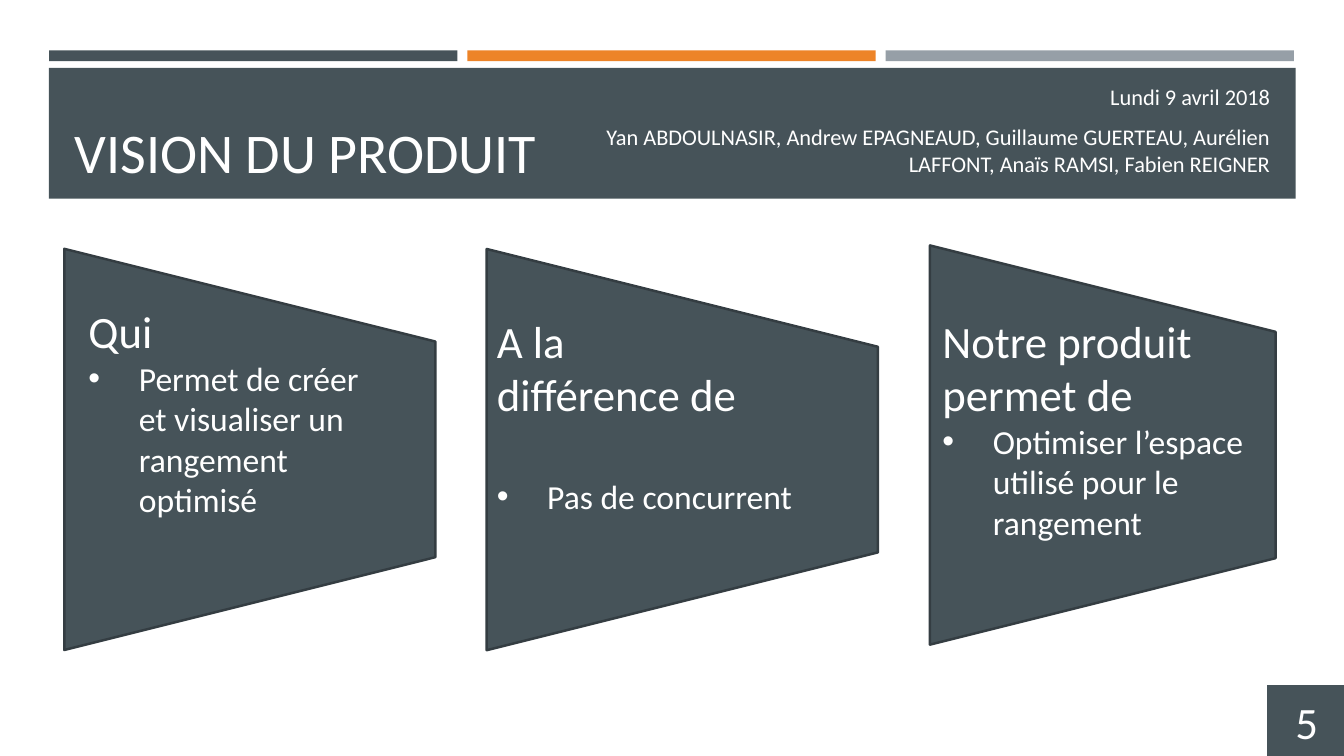
from dataclasses import dataclass

import pptx
import pptx.dml.color
import pptx.enum.shapes
import pptx.enum.text
import pptx.oxml
import pptx.oxml.ns
import pptx.util

Cm = pptx.util.Cm
Pt = pptx.util.Pt
Align = pptx.enum.text.PP_ALIGN
Anchor = pptx.enum.text.MSO_ANCHOR
Preset = pptx.enum.shapes.MSO_SHAPE

SLATE, ORANGE, GREY = "465359", "ED8428", "969FA7"
OUTLINE, WHITE = "343D42", "FFFFFF"
BULLET_INDENT = Cm(1.27)


@dataclass
class Box:
    """Position and size in centimetres."""
    left: float
    top: float
    width: float
    height: float

    def lengths(self) -> list[pptx.util.Length]:
        return [Cm(value) for value in (self.left, self.top, self.width, self.height)]


@dataclass
class Line:
    text: str
    size: float
    align: Align = Align.LEFT
    before: float = 0
    after: float = 0
    bullet: bool = False


@dataclass
class Panel:
    """A trapezoid, given before its quarter turn, and the text laid over it."""
    trapezoid: Box
    text_box: Box
    lines: list[Line]


PANELS = [
    Panel(Box(1.24, 6.65, 10.11, 9.35), Box(1.98, 7.54, 8.08, 6.76), [
        Line("Qui", 32),
        Line("Permet de créer et visualiser un rangement optimisé", 24, bullet=True),
    ]),
    Panel(Box(12.14, 6.4, 10.11, 9.86), Box(12.27, 7.77, 10.26, 5.38), [
        Line("A la", 32),
        Line("différence de", 32),
        Line("Pas de concurrent", 24, before=39, bullet=True),
    ]),
    Panel(Box(22.76, 6.86, 10.06, 8.71), Box(23.5, 7.77, 8.76, 7.09), [
        Line("Notre produit permet de", 32),
        Line("Optimiser l’espace utilisé pour le rangement", 24, bullet=True),
    ]),
]

CREDITS = [
    Line(text, 16, Align.RIGHT, before=3.2, after=6)
    for text in (
        "Lundi 9 avril 2018",
        "Yan ABDOULNASIR, Andrew EPAGNEAUD, Guillaume GUERTEAU, "
        "Aurélien LAFFONT, Anaïs RAMSI, Fabien REIGNER",
    )
]


def color(value: str) -> pptx.dml.color.RGBColor:
    return pptx.dml.color.RGBColor.from_string(value)


def set_attributes(target, values: dict) -> None:
    for name, value in values.items():
        setattr(target, name, value)


def add_bullet(paragraph) -> None:
    properties = paragraph._p.get_or_add_pPr()
    properties.set("marL", str(BULLET_INDENT))
    properties.set("indent", str(-BULLET_INDENT))
    namespace = pptx.oxml.ns.nsdecls("a")
    for xml in (f'<a:buFont {namespace} typeface="Arial"/>',
                f'<a:buChar {namespace} char="•"/>'):
        properties.append(pptx.oxml.parse_xml(xml))


def write_lines(shape, lines: list[Line], anchor: Anchor = Anchor.TOP) -> None:
    frame = shape.text_frame
    set_attributes(frame, {"word_wrap": True, "vertical_anchor": anchor})
    for index, line in enumerate(lines):
        paragraph = frame.add_paragraph() if index else frame.paragraphs[0]
        set_attributes(paragraph, {
            "alignment": line.align,
            "space_before": Pt(line.before),
            "space_after": Pt(line.after),
        })
        if line.bullet:
            add_bullet(paragraph)
        run = paragraph.add_run()
        run.text = line.text
        set_attributes(run.font, {"name": "Calibri", "size": Pt(line.size)})
        run.font.color.rgb = color(WHITE)


def add_filled_shape(slide, preset: Preset, box: Box, fill: str, outline: str | None = None):
    shape = slide.shapes.add_shape(preset, *box.lengths())
    shape.shadow.inherit = False
    shape.fill.solid()
    shape.fill.fore_color.rgb = color(fill)
    if outline:
        shape.line.color.rgb = color(outline)
        shape.line.width = Pt(1.75)
    else:
        shape.line.fill.background()
    return shape


def add_text(slide, box: Box, lines: list[Line], anchor: Anchor = Anchor.TOP) -> None:
    write_lines(slide.shapes.add_textbox(*box.lengths()), lines, anchor)


def add_header(slide) -> None:
    for index, fill in enumerate((SLATE, ORANGE, GREY)):
        stripe = Box(1.24 + index * 10.54, 1.27, 10.29, 0.27)
        add_filled_shape(slide, Preset.RECTANGLE, stripe, fill)
    add_filled_shape(slide, Preset.RECTANGLE, Box(1.23, 1.71, 31.42, 3.3), SLATE)
    add_text(slide, Box(1.63, 1.96, 30.63, 2.82),
             [Line("VISION DU PRODUIT", 40)], Anchor.BOTTOM)
    add_text(slide, Box(14.76, 1.96, 17.5, 2.64), CREDITS, Anchor.MIDDLE)


def add_panel(slide, panel: Panel) -> None:
    trapezoid = add_filled_shape(slide, Preset.TRAPEZOID, panel.trapezoid, SLATE, OUTLINE)
    trapezoid.rotation = 90
    add_text(slide, panel.text_box, panel.lines)


def add_page_number(slide) -> None:
    square = add_filled_shape(slide, Preset.RECTANGLE,
                              Box(31.9, 17.22, 2.06, 1.93), SLATE, WHITE)
    write_lines(square, [Line("5", 32, Align.CENTER)], Anchor.MIDDLE)


def main() -> None:
    presentation = pptx.Presentation()
    set_attributes(presentation, {"slide_width": Cm(33.87), "slide_height": Cm(19.05)})
    slide = presentation.slides.add_slide(presentation.slide_layouts[6])
    add_header(slide)
    for panel in PANELS:
        add_panel(slide, panel)
    add_page_number(slide)
    presentation.save("out.pptx")


if __name__ == "__main__":
    main()
